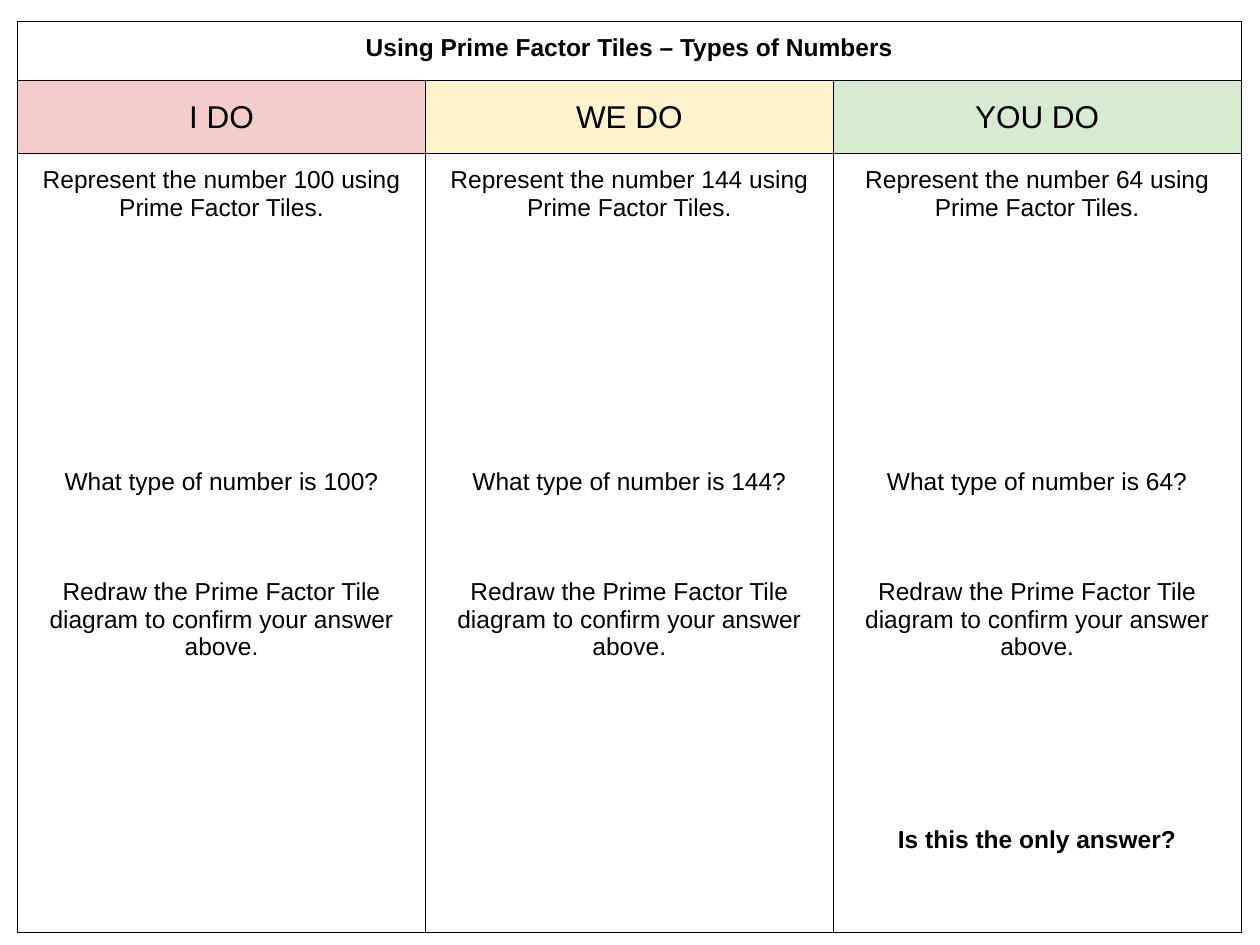
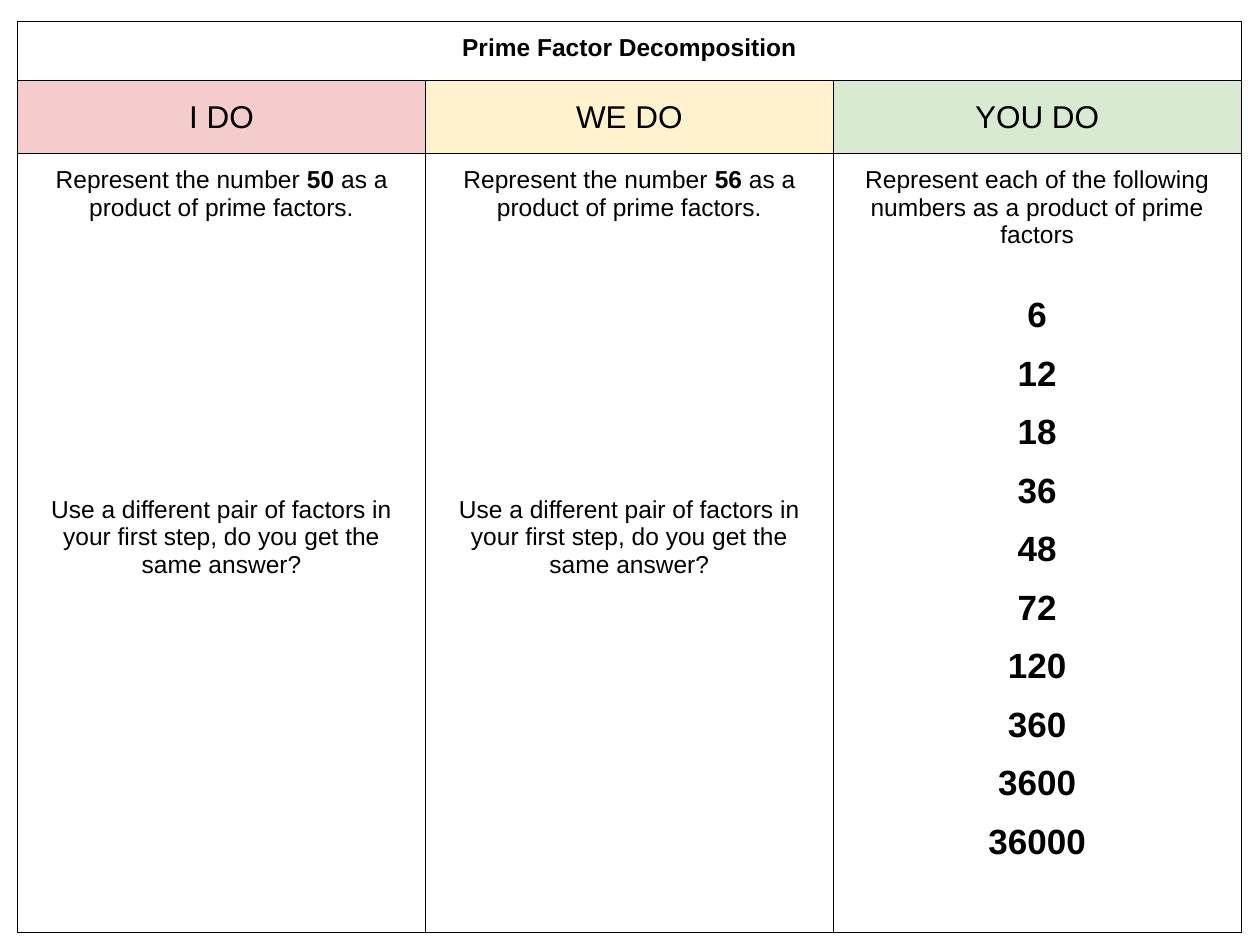
from dataclasses import dataclass

from lxml import etree
from pptx import Presentation
from pptx.dml.color import RGBColor
from pptx.enum.text import MSO_ANCHOR, PP_ALIGN
from pptx.oxml.ns import qn
from pptx.slide import Slide
from pptx.table import _Cell
from pptx.util import Inches, Pt

CENTER = PP_ALIGN.CENTER
TOP, MIDDLE = MSO_ANCHOR.TOP, MSO_ANCHOR.MIDDLE

BLACK = RGBColor(0x00, 0x00, 0x00)
WHITE = RGBColor(0xFF, 0xFF, 0xFF)
PINK = RGBColor(0xF4, 0xCC, 0xCC)
CREAM = RGBColor(0xFF, 0xF2, 0xCC)
GREEN = RGBColor(0xD9, 0xEA, 0xD3)

FONT = "Arial"
LEFT, TABLE_TOP = Inches(0.14), Inches(0.17)
TABLE_WIDTH = Inches(9.71)
ROW_HEIGHTS = (Inches(0.47), Inches(0.58), Inches(6.18))
CELL_MARGIN = Inches(0.1)
BORDER_WIDTH = Pt(0.75)
WORKING_LINE = 15.7  # points per line of space left for pupils' working

STAGES = (("I DO", PINK), ("WE DO", CREAM), ("YOU DO", GREEN))


@dataclass(frozen=True)
class Line:
    """One paragraph; words between asterisks are bold."""
    text: str
    lines_before: int = 0
    size: int = 14
    bold: bool = False
    spacing: float = 1.0


@dataclass(frozen=True)
class Lesson:
    title: str
    tasks: tuple[list[Line], ...]


def tile_tasks(number: int) -> list[Line]:
    return [
        Line(f"Represent the number {number} using Prime Factor Tiles."),
        Line(f"What type of number is {number}?", 9),
        Line("Redraw the Prime Factor Tile diagram to confirm your answer above.", 3),
    ]


def decomposition_tasks(number: int) -> list[Line]:
    return [
        Line(f"Represent the number *{number}* as a product of prime factors."),
        Line("Use a different pair of factors in your first step, "
             "do you get the same answer?", 10),
    ]


def practice_tasks(numbers: tuple[int, ...]) -> list[Line]:
    instruction = Line("Represent each of the following numbers "
                       "as a product of prime factors")
    return [instruction] + [
        Line(str(number), 0 if position else 1, size=20, bold=True, spacing=1.5)
        for position, number in enumerate(numbers)
    ]


LESSONS = (
    Lesson("Using Prime Factor Tiles – Types of Numbers", (
        tile_tasks(100),
        tile_tasks(144),
        tile_tasks(64) + [Line("Is this the only answer?", 6, bold=True)],
    )),
    Lesson("Prime Factor Decomposition", (
        decomposition_tasks(50),
        decomposition_tasks(56),
        practice_tasks((6, 12, 18, 36, 48, 72, 120, 360, 3600, 36000)),
    )),
)


def add_borders(cell: _Cell) -> None:
    properties = cell._tc.get_or_add_tcPr()
    for position, side in enumerate(("a:lnL", "a:lnR", "a:lnT", "a:lnB")):
        border = etree.Element(qn(side), w=str(BORDER_WIDTH))
        fill = etree.SubElement(border, qn("a:solidFill"))
        etree.SubElement(fill, qn("a:srgbClr"), val=str(BLACK))
        properties.insert(position, border)


def write_cell(cell: _Cell, lines: list[Line], anchor: MSO_ANCHOR = TOP) -> None:
    cell.vertical_anchor = anchor
    frame = cell.text_frame
    for position, line in enumerate(lines):
        paragraph = frame.add_paragraph() if position else frame.paragraphs[0]
        paragraph.alignment = CENTER
        paragraph.line_spacing = line.spacing
        paragraph.space_before = Pt(line.lines_before * WORKING_LINE)
        font = paragraph.font
        font.name, font.size, font.bold = FONT, Pt(line.size), line.bold
        font.color.rgb = BLACK
        for part, words in enumerate(line.text.split("*")):
            run = paragraph.add_run()
            run.text = words
            if part % 2:
                run.font.bold = True


def add_lesson_table(slide: Slide, lesson: Lesson) -> None:
    table = slide.shapes.add_table(
        len(ROW_HEIGHTS), len(STAGES), LEFT, TABLE_TOP, TABLE_WIDTH, sum(ROW_HEIGHTS)
    ).table
    table.first_row = table.horz_banding = False
    for row, height in zip(table.rows, ROW_HEIGHTS):
        row.height = height
    for cell in table.iter_cells():
        cell.margin_left = cell.margin_right = CELL_MARGIN
        cell.margin_top = cell.margin_bottom = CELL_MARGIN
        cell.fill.solid()
        cell.fill.fore_color.rgb = WHITE
        add_borders(cell)

    title_cell = table.cell(0, 0)
    title_cell.merge(table.cell(0, len(STAGES) - 1))
    write_cell(title_cell, [Line(lesson.title, bold=True)])
    for column, ((stage, color), tasks) in enumerate(zip(STAGES, lesson.tasks)):
        stage_cell = table.cell(1, column)
        stage_cell.fill.fore_color.rgb = color
        write_cell(stage_cell, [Line(stage, size=18)], MIDDLE)
        write_cell(table.cell(2, column), tasks)


def main() -> None:
    presentation = Presentation()
    presentation.slide_width = Inches(10)
    presentation.slide_height = Inches(7.5)
    blank_layout = presentation.slide_layouts[6]
    for lesson in LESSONS:
        add_lesson_table(presentation.slides.add_slide(blank_layout), lesson)
    presentation.save("out.pptx")


if __name__ == "__main__":
    main()
